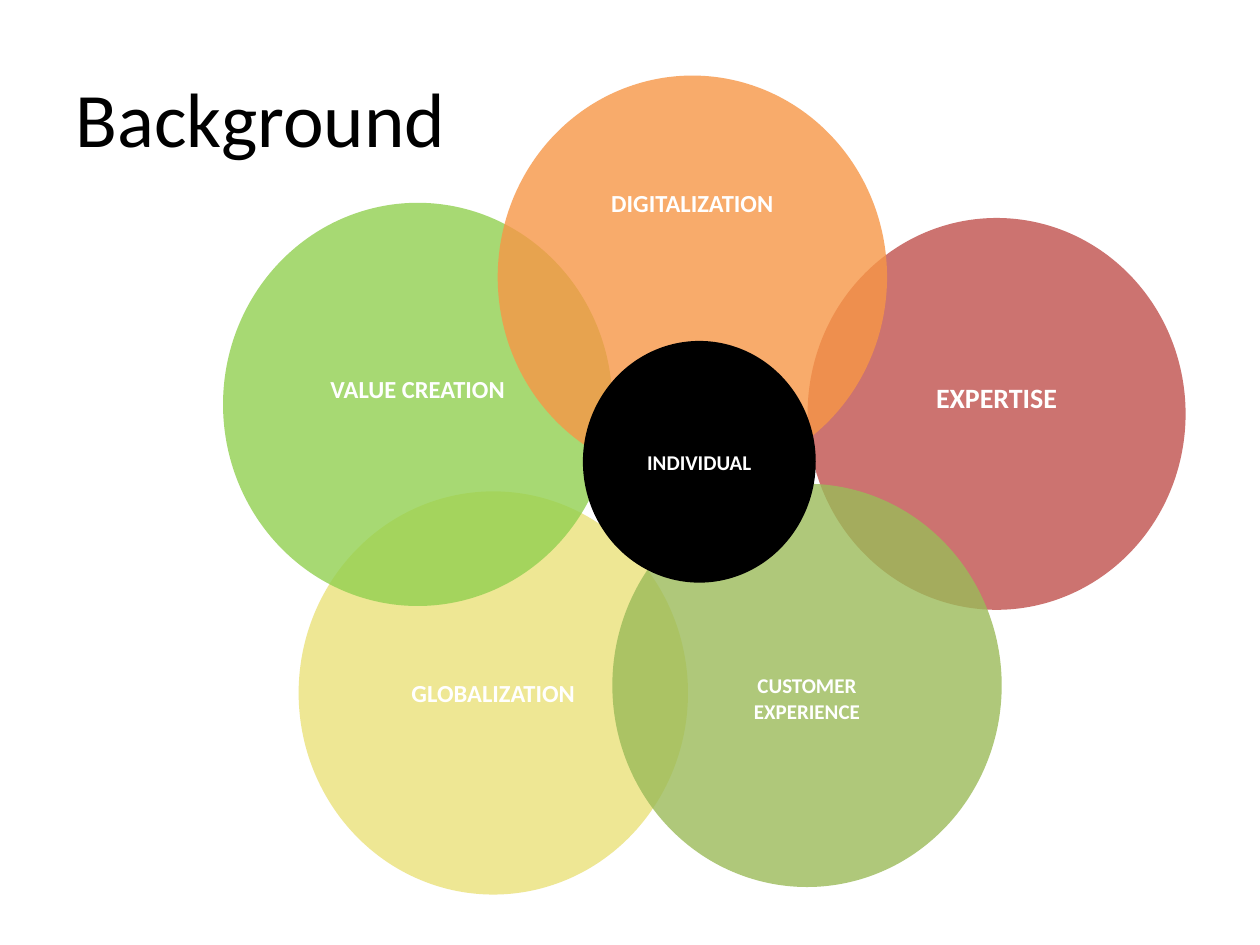
from dataclasses import dataclass

from lxml.etree import SubElement
from pptx import Presentation
from pptx.dml.color import RGBColor
from pptx.enum.shapes import MSO_SHAPE as Shape
from pptx.enum.text import MSO_ANCHOR as Anchor, PP_ALIGN as Align
from pptx.oxml.ns import qn
from pptx.shapes.autoshape import Shape as AutoShape
from pptx.shapes.group import GroupShape
from pptx.text.text import TextFrame
from pptx.util import Inches, Pt

FONT = "Calibri"
COLORS = {
    "black": "000000",
    "white": "FFFFFF",
    "yellow": "EAE27A",
    "red": "C0504D",
    "olive": "9BBB59",
    "green": "92D050",
    "orange": "F79646",
}


@dataclass
class Circle:
    label: str
    color: str
    left: float
    top: float
    width: float = 3.09
    height: float = 3.2
    size: int = 14
    raised: float = 0
    opacity: int = 80


CIRCLES = [
    Circle("GLOBALIZATION", "yellow", 2.37, 3.9),
    Circle("EXPERTISE", "red", 6.41, 1.73, 3, 3.11, size=16, raised=0.13),
    Circle("CUSTOMER\nEXPERIENCE", "olive", 4.86, 3.84, size=12, raised=-0.1),
    Circle("VALUE CREATION", "green", 1.77, 1.61, raised=0.12),
    Circle("DIGITALIZATION", "orange", 3.95, 0.6, raised=0.59),
    Circle("INDIVIDUAL", "black", 4.64, 2.72, 1.82, 1.89, size=12, opacity=100),
]


def color(name: str) -> RGBColor:
    return RGBColor.from_string(COLORS[name])


def write(text_frame: TextFrame, text: str, size: int, color_name: str,
          align: Align, bold: bool = False) -> None:
    text_frame.text = text
    text_frame.word_wrap = True
    text_frame.vertical_anchor = Anchor.MIDDLE
    for paragraph in text_frame.paragraphs:
        paragraph.alignment = align
        for run in paragraph.runs:
            run.font.name = FONT
            run.font.size = Pt(size)
            run.font.bold = bold
            run.font.color.rgb = color(color_name)


def set_opacity(shape: AutoShape, percent: int) -> None:
    fill_color = shape.fill._xPr.find(qn("a:solidFill"))[0]
    SubElement(fill_color, qn("a:alpha")).set("val", str(percent * 1000))


def draw_circle(group: GroupShape, circle: Circle) -> None:
    shape = group.shapes.add_shape(
        Shape.OVAL, Inches(circle.left), Inches(circle.top),
        Inches(circle.width), Inches(circle.height))
    shape.shadow.inherit = False
    shape.fill.solid()
    shape.fill.fore_color.rgb = color(circle.color)
    if circle.opacity < 100:
        set_opacity(shape, circle.opacity)
        shape.line.fill.background()
    else:
        shape.line.color.rgb = color(circle.color)
        shape.line.width = Pt(2)
    text_frame = shape.text_frame
    write(text_frame, circle.label, circle.size, "white", Align.CENTER, True)
    text_frame.margin_top = Inches(0.05 + max(0, -2 * circle.raised))
    text_frame.margin_bottom = Inches(0.05 + max(0, 2 * circle.raised))


def main() -> None:
    presentation = Presentation()
    presentation.slide_width = Inches(10)
    presentation.slide_height = Inches(7.5)
    slide = presentation.slides.add_slide(presentation.slide_layouts[6])

    title = slide.shapes.add_textbox(
        Inches(0.5), Inches(0.3), Inches(9), Inches(1.25))
    write(title.text_frame, "Background", 44, "black", Align.LEFT)

    group = slide.shapes.add_group_shape()
    for circle in CIRCLES:
        draw_circle(group, circle)

    presentation.save("out.pptx")


if __name__ == "__main__":
    main()
